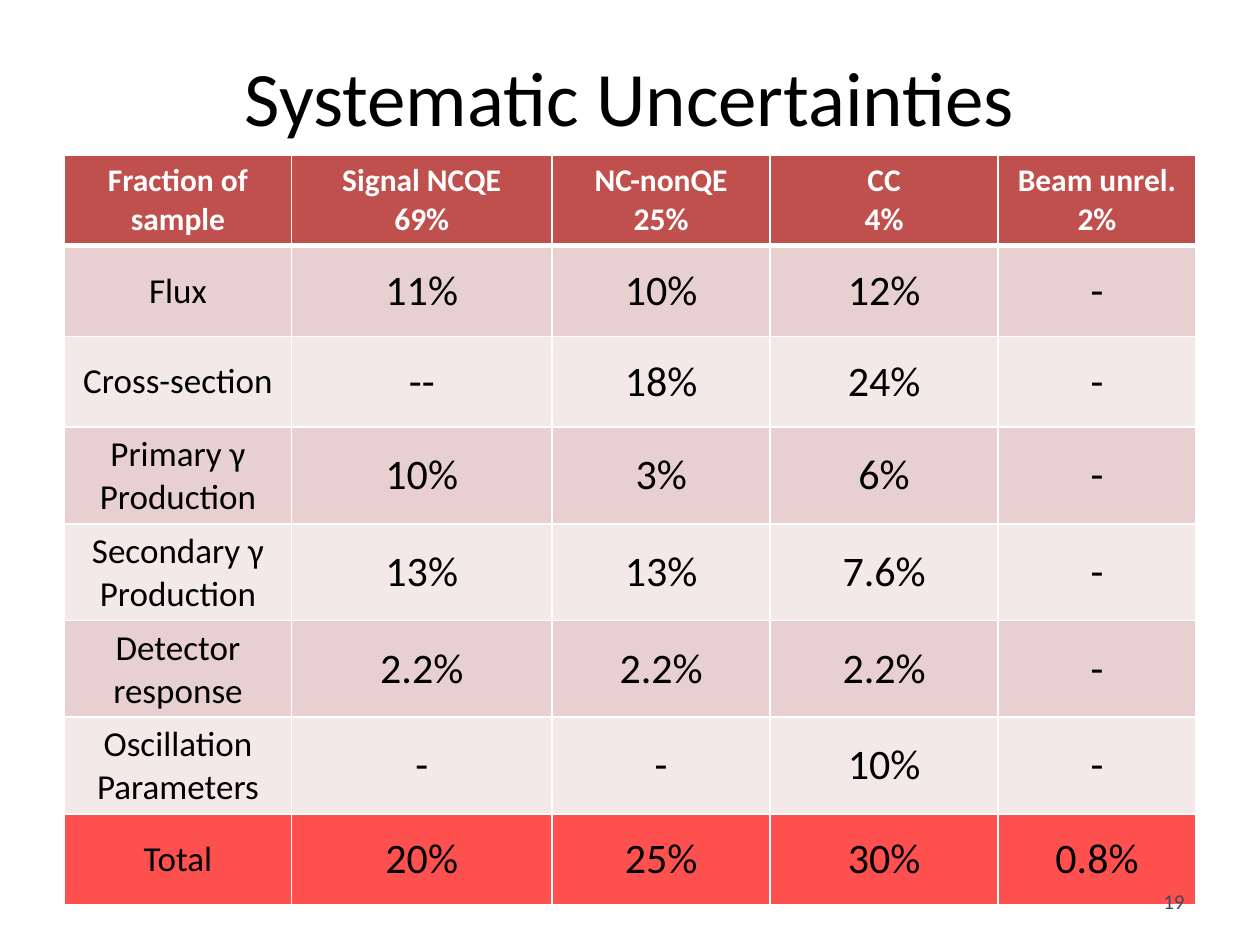
from dataclasses import dataclass

from lxml.etree import SubElement
from pptx import Presentation
from pptx.dml.color import RGBColor
from pptx.enum.text import MSO_ANCHOR, PP_ALIGN
from pptx.oxml.ns import qn
from pptx.slide import Slide
from pptx.table import _Cell
from pptx.text.text import TextFrame
from pptx.util import Pt


@dataclass(frozen=True)
class Theme:
    font: str = "Calibri"
    ink: str = "000000"
    white: str = "FFFFFF"
    muted: str = "464653"
    head: str = "C0504D"
    bands: tuple[str, str] = ("E8D0D0", "F4E9E9")
    total: str = "FF5050"
    title_size: float = 44
    head_size: float = 18
    label_size: float = 20
    value_size: float = 24
    page_size: float = 12
    rule: float = 1
    head_rule: float = 3


@dataclass(frozen=True)
class Style:
    size: float
    color: str
    bold: bool = False
    align: PP_ALIGN = PP_ALIGN.CENTER


@dataclass(frozen=True)
class Label:
    text: str
    left: float
    top: float
    width: float
    height: float
    style: Style


@dataclass(frozen=True)
class Row:
    cells: tuple[str, ...]
    fill: str
    first: Style
    rest: Style
    above: float = 1
    below: float = 1


THEME = Theme()
HEAD = Style(THEME.head_size, THEME.white, True)
NAME = Style(THEME.label_size, THEME.ink)
VALUE = Style(THEME.value_size, THEME.ink)

TITLE = Label("Systematic Uncertainties", 36, 9.4, 648, 90,
              Style(THEME.title_size, THEME.ink))
PAGE = Label("19", 516, 500.4, 168, 28.8,
             Style(THEME.page_size, THEME.muted, align=PP_ALIGN.RIGHT))

HEADER = ("Fraction of sample", "Signal NCQE\n69%", "NC-nonQE\n25%",
          "CC\n4%", "Beam unrel.\n2%")
BODY = (
    ("Flux", "11%", "10%", "12%", "-"),
    ("Cross-section", "--", "18%", "24%", "-"),
    ("Primary γ\nProduction", "10%", "3%", "6%", "-"),
    ("Secondary γ\nProduction", "13%", "13%", "7.6%", "-"),
    ("Detector response", "2.2%", "2.2%", "2.2%", "-"),
    ("Oscillation\vParameters", "-", "-", "10%", "-"),
)
TOTAL = ("Total", "20%", "25%", "30%", "0.8%")

LEFT, TOP, HEIGHT = 36.9, 88.6, 51.84
WIDTHS = (129.6, 149, 124.6, 130.3, 113)


def write(frame: TextFrame, text: str, style: Style) -> None:
    frame.text = text
    frame.word_wrap = True
    for par in frame.paragraphs:
        par.alignment = style.align
        font = par.font
        font.name = THEME.font
        font.size = Pt(style.size)
        font.bold = style.bold
        font.color.rgb = RGBColor.from_string(style.color)


def add_label(slide: Slide, label: Label) -> None:
    box = slide.shapes.add_textbox(Pt(label.left), Pt(label.top),
                                   Pt(label.width), Pt(label.height))
    write(box.text_frame, label.text, label.style)
    box.text_frame.vertical_anchor = MSO_ANCHOR.MIDDLE


def add_edges(cell: _Cell, above: float, below: float) -> None:
    props = cell._tc.get_or_add_tcPr()
    edges = {"L": THEME.rule, "R": THEME.rule, "T": above, "B": below}
    for side, width in edges.items():
        line = SubElement(props, qn(f"a:ln{side}"), w=str(Pt(width)))
        fill = SubElement(line, qn("a:solidFill"))
        SubElement(fill, qn("a:srgbClr"), val=THEME.white)


def fill_cell(cell: _Cell, text: str, style: Style, row: Row) -> None:
    write(cell.text_frame, text, style)
    cell.vertical_anchor = MSO_ANCHOR.MIDDLE
    add_edges(cell, row.above, row.below)
    cell.fill.solid()
    cell.fill.fore_color.rgb = RGBColor.from_string(row.fill)


def add_grid(slide: Slide, rows: list[Row]) -> None:
    grid = slide.shapes.add_table(
        len(rows), len(WIDTHS), Pt(LEFT), Pt(TOP),
        Pt(sum(WIDTHS)), Pt(HEIGHT * len(rows))).table
    for col, width in zip(grid.columns, WIDTHS):
        col.width = Pt(width)
    for line, row in zip(grid.rows, rows):
        line.height = Pt(HEIGHT)
        for idx, (cell, text) in enumerate(zip(line.cells, row.cells)):
            fill_cell(cell, text, row.rest if idx else row.first, row)


def make_rows() -> list[Row]:
    rows = [Row(HEADER, THEME.head, HEAD, HEAD, below=THEME.head_rule)]
    for idx, cells in enumerate(BODY):
        above = THEME.rule if idx else THEME.head_rule
        rows.append(Row(cells, THEME.bands[idx % 2], NAME, VALUE, above))
    rows.append(Row(TOTAL, THEME.total, NAME, VALUE))
    return rows


def main() -> None:
    deck = Presentation()
    deck.slide_width, deck.slide_height = Pt(720), Pt(540)
    slide = deck.slides.add_slide(deck.slide_layouts[6])
    add_label(slide, TITLE)
    add_grid(slide, make_rows())
    add_label(slide, PAGE)
    deck.save("out.pptx")


if __name__ == "__main__":
    main()
